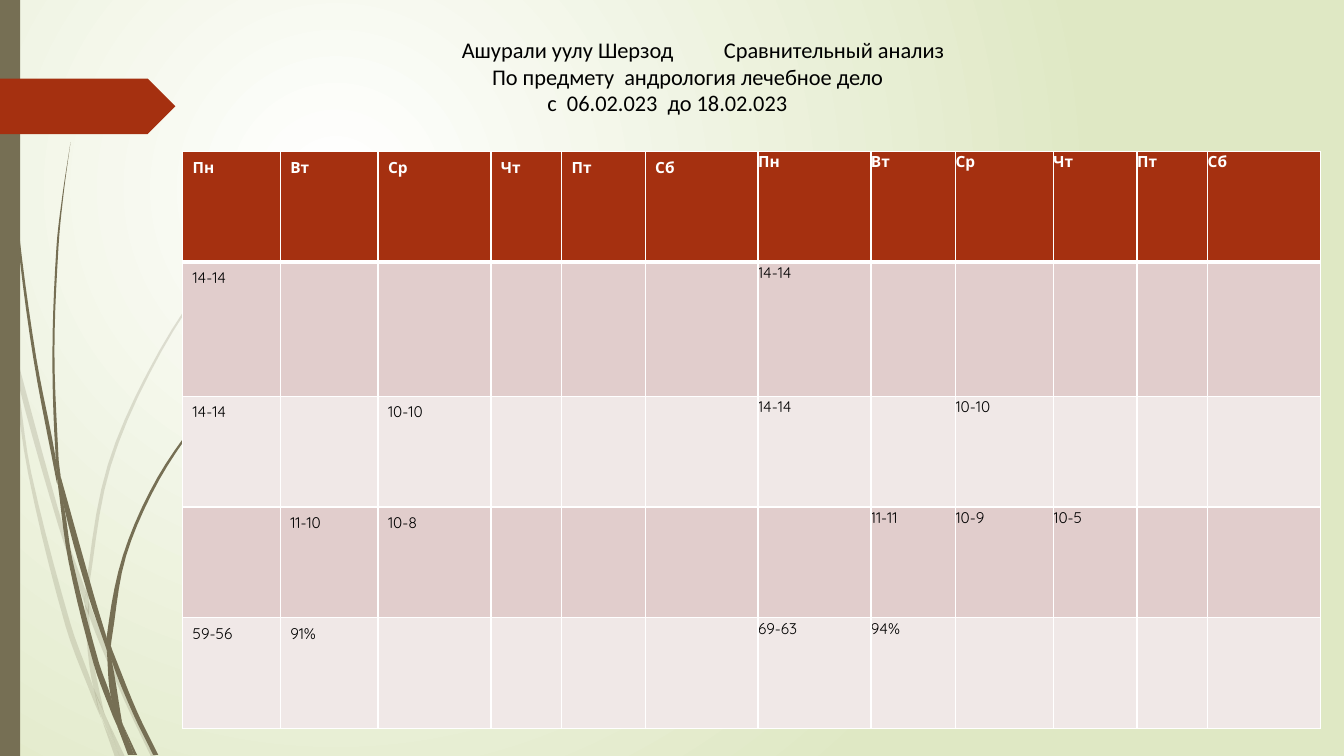
from dataclasses import dataclass

from lxml.etree import SubElement
from pptx import Presentation
from pptx.dml.color import RGBColor as RGB
from pptx.enum.shapes import MSO_SHAPE as Shape
from pptx.enum.text import MSO_ANCHOR as Anchor, MSO_AUTO_SIZE as AutoSize, PP_ALIGN as Align
from pptx.oxml.ns import qn
from pptx.util import Inches, Pt


@dataclass(frozen=True)
class Theme:
    glow: str = "FFFFFF"
    meadow: str = "DFE8C4"
    stem: str = "766F54"
    accent: str = "A53010"
    bands: tuple = ("E1CDCC", "F0E8E7")
    ink: str = "000000"
    grid: str = "FFFFFF"
    title_font: str = "Calibri"
    table_font: str = "Quicksand"
    title_size: int = 16
    table_size: int = 11
    pale_alpha: int = 20


@dataclass(frozen=True)
class Box:
    left: float
    top: float
    width: float
    height: float

    def emu(self):
        return [Inches(v) for v in (self.left, self.top, self.width, self.height)]


THEME = Theme()
PAGE = Box(0, 0, 13.33, 7.5)
TITLE_BOX = Box(0.73, 0.3, 9.2, 0.91)
TABLE_BOX = Box(1.81, 1.5, 11.29, 5.73)

# Each title line: its pieces as (tab stop in inches, words)
TITLE_LINES = [
    [(3.75, "Ашурали уулу Шерзод"), (6.35, "Сравнительный анализ")],
    [(4.05, "По предмету  андрология лечебное дело")],
    [(4.6, "с  06.02.023  до 18.02.023")],
]

DAYS = ["Пн", "Вт", "Ср", "Чт", "Пт", "Сб"]
WEEKS = 2
COLUMN_WIDTHS = [0.97, 0.97, 1.12, 0.7, 0.83, 1.12, 1.12, 0.84, 0.97, 0.83, 0.7, 1.12]
ROW_HEIGHTS = [1.1, 1.33, 1.1, 1.1, 1.1]
# Each row: attendance by column number
ATTENDANCE = [
    {0: "14-14", 6: "14-14"},
    {0: "14-14", 2: "10-10", 6: "14-14", 8: "10-10"},
    {1: "11-10", 2: "10-8", 7: "11-11", 8: "10-9", 9: "10-5"},
    {0: "59-56", 1: "91%", 6: "69-63", 7: "94%"},
]

# Each piece of grass: points down its left edge, then down its right edge
PALE_GRASS = [
    ([(0, 2.99), (0.1, 3.44), (0.11, 3.5)], [(0, 2.82), (0.09, 3.22), (0.11, 3.5)]),
    ([(0.14, 3.45), (0.17, 3.76), (0.58, 5.22), (0.84, 5.99)], [(0.14, 3.45), (0.62, 5.2), (0.85, 5.86)]),
    ([(0.88, 5.96), (0.88, 6.1), (1.23, 6.94), (1.5, 7.51)],
     [(0.88, 5.96), (0.92, 6.07), (1.27, 6.92), (1.55, 7.51)]),
    ([(1.05, 7.11), (1.19, 7.51)], [(1.05, 7.11), (1.24, 7.51)]),
    ([(0.11, 3.5), (0.28, 4.7), (0.65, 6.21), (0.92, 6.93), (1.01, 7.14)],
     [(0.11, 3.5), (0.17, 3.76), (0.31, 4.69), (0.7, 6.19), (0.93, 6.83), (0.99, 7.07), (1.01, 7.14)]),
    ([(0.84, 5.99), (0.87, 6.46), (0.93, 6.83), (1.05, 7.11)],
     [(0.84, 5.99), (0.88, 6.08), (0.91, 6.46), (1.03, 7.06), (1.05, 7.11)]),
    ([(3.12, 1.53), (2.68, 1.97), (2.28, 2.44), (1.58, 3.48), (1.07, 4.61), (0.85, 5.84), (0.88, 5.96)],
     [(3.12, 1.53), (2.68, 1.98), (2.29, 2.45), (1.6, 3.49), (1.1, 4.62), (0.88, 5.84), (0.88, 5.96)]),
    ([(1.01, 7.14), (1.14, 7.51)], [(1.01, 7.14), (1.19, 7.51)]),
    ([(0.85, 5.86), (0.84, 5.99), (0.88, 6.1)], [(0.85, 5.86), (0.88, 5.96), (0.88, 6.1)]),
    ([(0.93, 6.83), (0.99, 7.07), (1.19, 7.51)], [(0.93, 6.83), (1.05, 7.11), (1.19, 7.51)]),
]
DARK_GRASS = [
    ([(0.03, 0), (0.07, 1.1), (0.17, 2.33), (0.33, 3.55), (0.56, 4.77), (0.57, 4.81)],
     [(0.04, 0), (0.08, 1.09), (0.19, 2.32), (0.36, 3.55), (0.55, 4.53), (0.57, 4.81)]),
    ([(0.6, 4.72), (0.64, 5.05), (0.88, 5.92), (1.06, 6.45)], [(0.6, 4.72), (0.93, 5.9), (1.06, 6.33)]),
    ([(1.1, 6.41), (1.11, 6.56), (1.32, 7.08), (1.52, 7.49)],
     [(1.1, 6.41), (1.13, 6.49), (1.36, 7.06), (1.57, 7.49)]),
    ([(0.57, 4.77), (0.68, 5.57), (0.93, 6.59), (1.11, 7.08), (1.17, 7.22)],
     [(0.57, 4.77), (0.64, 5.05), (0.72, 5.56), (0.98, 6.57), (1.1, 6.91), (1.17, 7.22)]),
    ([(0.7, 1.41), (0.62, 1.93), (0.56, 2.45), (0.52, 3.49), (0.55, 4.49), (0.6, 4.72)],
     [(0.7, 1.41), (0.63, 1.93), (0.58, 2.45), (0.54, 3.49), (0.58, 4.53), (0.6, 4.72)]),
    ([(1.22, 7.19), (1.33, 7.49)], [(1.22, 7.19), (1.36, 7.49)]),
    ([(0.55, 4.49), (0.57, 4.77), (0.64, 5.05)], [(0.55, 4.49), (0.6, 4.72), (0.64, 5.05)]),
    ([(2.6, 3.44), (2.31, 3.73), (2.04, 4.05), (1.56, 4.74), (1.22, 5.51), (1.06, 6.31), (1.1, 6.41)],
     [(2.6, 3.44), (2.31, 3.74), (2.05, 4.06), (1.58, 4.76), (1.25, 5.52), (1.11, 6.33), (1.1, 6.41)]),
    ([(1.17, 7.22), (1.27, 7.49)], [(1.17, 7.22), (1.31, 7.49)]),
    ([(1.06, 6.45), (1.1, 6.91), (1.22, 7.19)], [(1.06, 6.45), (1.11, 6.56), (1.21, 7.16), (1.22, 7.19)]),
    ([(1.06, 6.31), (1.06, 6.45), (1.11, 6.56)], [(1.06, 6.31), (1.1, 6.41), (1.11, 6.56)]),
    ([(1.1, 6.91), (1.17, 7.22), (1.3, 7.49)], [(1.1, 6.91), (1.22, 7.19), (1.33, 7.49)]),
]


def paint(shape, color):
    shape.fill.solid()
    shape.fill.fore_color.rgb = RGB.from_string(color)
    shape.line.fill.background()
    shape.shadow.inherit = False


def smooth_edge(points, steps=5):
    """Hermite curve through the points, with x as a function of y."""
    around = zip(points[:1] + points[:-1], points[1:] + points[-1:])
    slopes = [(x1 - x0) / (y1 - y0) for (x0, y0), (x1, y1) in around]
    curve = []
    for i, ((x0, y0), (x1, y1)) in enumerate(zip(points, points[1:])):
        for t in (step / steps for step in range(steps)):
            bend = t * (1 - t) * ((1 - t) * slopes[i] - t * slopes[i + 1])
            curve.append((x0 + (x1 - x0) * t * t * (3 - 2 * t) + (y1 - y0) * bend, y0 + (y1 - y0) * t))
    return curve + [points[-1]]


def add_grass(slide, box, edges, alpha):
    left_edge, right_edge = map(smooth_edge, edges)
    outline = [(Inches(box.left + x), Inches(box.top + y)) for x, y in left_edge + right_edge[::-1]]
    pen = slide.shapes.build_freeform(*outline[0])
    pen.add_line_segments(outline[1:], close=True)
    grass = pen.convert_to_shape()
    paint(grass, THEME.stem)
    if alpha < 100:
        SubElement(grass._element.spPr.find(qn("a:solidFill"))[0], qn("a:alpha"), val=str(alpha * 1000))


def add_backdrop(slide, box):
    fill = slide.background.fill
    fill.gradient()
    for stop, color in zip(fill.gradient_stops, (THEME.glow, THEME.meadow)):
        stop.color.rgb = RGB.from_string(color)
    gradient = slide.element.find(".//" + qn("a:gradFill"))
    gradient.remove(gradient.find(qn("a:lin")))
    circle = SubElement(gradient, qn("a:path"), path="circle")
    SubElement(circle, qn("a:fillToRect"), l="50000", t="50000", r="100000", b="100000")
    for pieces, alpha in ((PALE_GRASS, THEME.pale_alpha), (DARK_GRASS, 100)):
        for edges in pieces:
            add_grass(slide, box, edges, alpha)
    side_bar = Box(box.left, box.top, 0.2, box.height)
    marker = Box(box.left, box.top + 0.78, 1.74, 0.55)
    for preset, place, color in ((Shape.RECTANGLE, side_bar, THEME.stem),
                                 (Shape.PENTAGON, marker, THEME.accent)):
        paint(slide.shapes.add_shape(preset, *place.emu()), color)


def add_title(slide, box):
    title = slide.shapes.title
    title.left, title.top, title.width, title.height = box.emu()
    frame = title.text_frame
    frame.word_wrap, frame.auto_size, frame.vertical_anchor = True, AutoSize.NONE, Anchor.MIDDLE
    for i, pieces in enumerate(TITLE_LINES):
        line = frame.add_paragraph() if i else frame.paragraphs[0]
        line.text = "".join("\t" + words for _, words in pieces)
        line.alignment = Align.LEFT
        line.font.name, line.font.size = THEME.title_font, Pt(THEME.title_size)
        line.font.color.rgb = RGB.from_string(THEME.ink)
        props = line._p.get_or_add_pPr()
        stops = props.makeelement(qn("a:tabLst"), {})
        props.find(qn("a:defRPr")).addprevious(stops)
        for position, _ in pieces:
            SubElement(stops, qn("a:tab"), pos=str(Inches(position)), algn="l")


def style_cell(cell, words, fill, ink, bold, flush, bottom_width):
    if flush:
        cell.margin_left = cell.margin_top = cell.margin_right = cell.margin_bottom = 0
    if words:
        cell.text = words
        entry = cell.text_frame.paragraphs[0]
        entry.line_spacing = 1.07
        entry.font.name, entry.font.size = THEME.table_font, Pt(THEME.table_size)
        entry.font.bold, entry.font.color.rgb = bold, RGB.from_string(ink)
    for side, width in zip("LRTB", (1, 1, 1, bottom_width)):
        border = SubElement(cell._tc.get_or_add_tcPr(), qn(f"a:ln{side}"), w=str(Pt(width)))
        SubElement(SubElement(border, qn("a:solidFill")), qn("a:srgbClr"), val=THEME.grid)
    cell.fill.solid()
    cell.fill.fore_color.rgb = RGB.from_string(fill)


def add_attendance(slide, box):
    rows = [dict(enumerate(DAYS * WEEKS))] + ATTENDANCE
    table = slide.shapes.add_table(len(rows), len(COLUMN_WIDTHS), *box.emu()).table
    for column, width in zip(table.columns, COLUMN_WIDTHS):
        column.width = Inches(width)
    for r, (entries, height) in enumerate(zip(rows, ROW_HEIGHTS)):
        table.rows[r].height = Inches(height)
        header = r == 0
        for c in range(len(COLUMN_WIDTHS)):
            style_cell(table.cell(r, c), entries.get(c),
                       fill=THEME.accent if header else THEME.bands[(r - 1) % 2],
                       ink=THEME.grid if header else THEME.ink, bold=header,
                       flush=c >= len(DAYS), bottom_width=3 if header else 1)


deck = Presentation()
deck.slide_width, deck.slide_height = Inches(PAGE.width), Inches(PAGE.height)
week_slide = deck.slides.add_slide(deck.slide_layouts[5])
add_backdrop(week_slide, PAGE)
add_attendance(week_slide, TABLE_BOX)
add_title(week_slide, TITLE_BOX)
deck.save("out.pptx")
